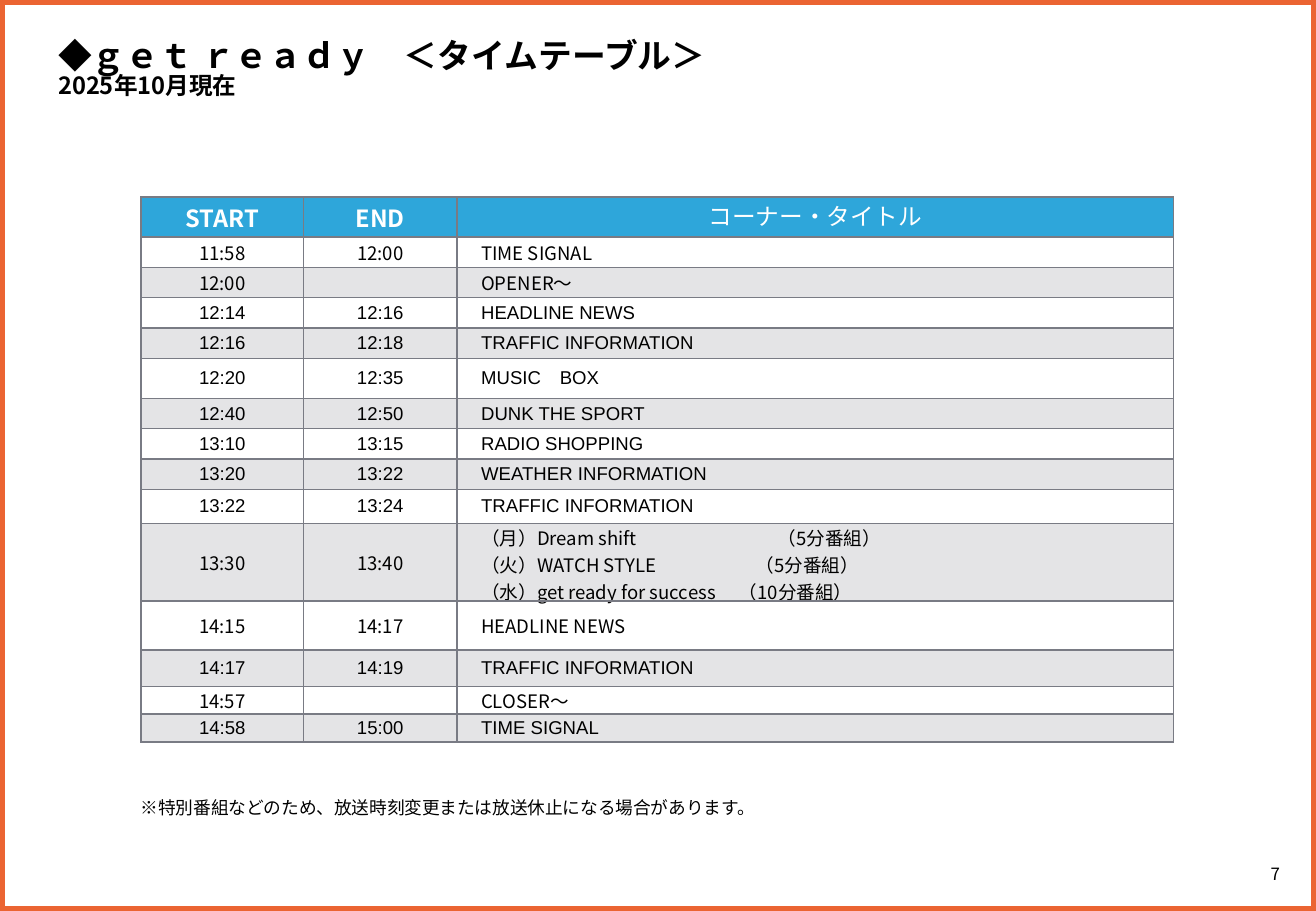
"""Build the radio programme timetable slide."""
from pptx import Presentation
from pptx.dml.color import RGBColor
from pptx.enum.shapes import MSO_SHAPE as Shape
from pptx.enum.text import MSO_ANCHOR as Anchor, MSO_AUTO_SIZE as AutoSize, PP_ALIGN as Align
from pptx.oxml import parse_xml
from pptx.oxml.ns import nsdecls, qn
from pptx.util import Inches, Pt
from lxml.etree import SubElement

BLACK = RGBColor(0x00, 0x00, 0x00)
WHITE = RGBColor(0xFF, 0xFF, 0xFF)
ORANGE = RGBColor(0xEB, 0x64, 0x32)
BLUE = RGBColor(0x2E, 0xA6, 0xDA)
GRAY = RGBColor(0x79, 0x7B, 0x84)
NOTO, ARIAL = "Noto Sans CJK JP", "Arial"
COLUMNS, ROWS = 1083, 750

deck = Presentation()
deck.slide_width, deck.slide_height = Inches(10.83), Inches(7.5)
column, row_unit = deck.slide_width // COLUMNS, deck.slide_height // ROWS
slide = deck.slides.add_slide(deck.slide_layouts[6])


def add_run(paragraph, text, size, face=NOTO, color=BLACK, bold=False):
    run = paragraph.add_run()
    run.text = text
    for key, value in dict(name=face, size=Pt(size), bold=bold).items():
        setattr(run.font, key, value)
    run.font.color.rgb = color
    SubElement(run.font._element, qn("a:ea")).set("typeface", face)


def add_text(left, top, width, height, anchor=Anchor.TOP, fit=AutoSize.SHAPE_TO_FIT_TEXT):
    box = slide.shapes.add_textbox(left * column, top * row_unit, width * column, height * row_unit)
    settings = dict(word_wrap=True, auto_size=fit, vertical_anchor=anchor)
    for key, value in settings.items():
        setattr(box.text_frame, key, value)
    return box.text_frame.paragraphs[0]


page_number = add_text(1016, 702, 67, 35, Anchor.MIDDLE, AutoSize.NONE)
page_number.alignment = Align.CENTER
add_run(page_number, "7", 10)

border = slide.shapes.add_shape(Shape.RECTANGLE, 0, 0, deck.slide_width, deck.slide_height)
border.shadow.inherit = False
border.fill.background()
border.line.color.rgb = ORANGE
border.line.width = Pt(6)

title = add_text(38, 29, 622, 44)
title.line_spacing = 0.85
add_run(title, "◆", 20)
add_run(title, "ｇｅｔ ｒｅａｄｙ　＜タイムテーブル＞", 20, bold=True)
title.add_line_break()
add_run(title, "2025年10月現在", 14, bold=True)

programmes = [
    ("START", "END", "コーナー・タイトル", 33, NOTO),
    ("11:58", "12:00", "TIME SIGNAL", 25, NOTO),
    ("12:00", "", "OPENER〜", 25, NOTO),
    ("12:14", "12:16", "HEADLINE NEWS", 25, ARIAL),
    ("12:16", "12:18", "TRAFFIC INFORMATION", 25, ARIAL),
    ("12:20", "12:35", "MUSIC　BOX", 33, ARIAL),
    ("12:40", "12:50", "DUNK THE SPORT", 25, ARIAL),
    ("13:10", "13:15", "RADIO SHOPPING", 25, ARIAL),
    ("13:20", "13:22", "WEATHER INFORMATION", 25, ARIAL),
    ("13:22", "13:24", "TRAFFIC INFORMATION", 28, ARIAL),
    ("13:30", "13:40", "（月）Dream shift\t（5分番組）\n（火）WATCH STYLE\t（5分番組）\n"
     "（水）get ready for success\t（10分番組）", 64, NOTO),
    ("14:15", "14:17", "HEADLINE NEWS", 40, NOTO),
    ("14:17", "14:19", "TRAFFIC INFORMATION", 30, ARIAL),
    ("14:57", "", "CLOSER〜", 23, NOTO),
    ("14:58", "15:00", "TIME SIGNAL", 23, ARIAL),
]
duration_tabs = [244, 226, 212]
timetable = slide.shapes.add_table(len(programmes), 3, 116 * column, 162 * row_unit,
                                   850 * column, 447 * row_unit).table
timetable.horz_banding = False
for table_column, width in zip(timetable.columns, (134, 126, 590)):
    table_column.width = width * column

for r, (start, end, corner, height, face) in enumerate(programmes):
    timetable.rows[r].height = height * row_unit
    for c, text in enumerate((start, end, corner)):
        cell = timetable.cell(r, c)
        is_header, is_corner = r == 0, c == 2
        indent = 20 * column if is_corner and not is_header else 0
        for key, value in dict(margin_left=indent, margin_right=0, margin_top=0,
                               margin_bottom=0, vertical_anchor=Anchor.MIDDLE).items():
            setattr(cell, key, value)
        properties = cell._tc.get_or_add_tcPr()
        for side in ("lnL", "lnR", "lnT", "lnB"):
            properties.append(parse_xml(
                f'<a:{side} {nsdecls("a")} w="12700"><a:solidFill>'
                f'<a:srgbClr val="{GRAY}"/></a:solidFill></a:{side}>'))
        if is_header or r % 2 == 0:
            cell.fill.solid()
            cell.fill.fore_color.rgb = BLUE if is_header else GRAY
            if not is_header:
                shade = properties.find(f"{qn('a:solidFill')}/{qn('a:srgbClr')}")
                SubElement(shade, qn("a:alpha")).set("val", "20000")
        else:
            cell.fill.background()
        lines = text.split("\n")
        for i, line in enumerate(lines):
            paragraph = cell.text_frame.add_paragraph() if i else cell.text_frame.paragraphs[0]
            paragraph.alignment = Align.LEFT if indent else Align.CENTER
            if "\t" in line:
                tabs = SubElement(paragraph._p.get_or_add_pPr(), qn("a:tabLst"))
                tab = SubElement(tabs, qn("a:tab"))
                tab.set("pos", str(duration_tabs[i] * column))
                tab.set("algn", "l")
            if not line:
                SubElement(paragraph._p, qn("a:endParaRPr")).set("sz", "1100")
            elif is_header:
                add_run(paragraph, line, 14, ARIAL if is_corner else face, WHITE, not is_corner)
            else:
                add_run(paragraph, line, 11, face)

notice = add_text(106, 651, 862, 28)
add_run(notice, "※特別番組などのため、放送時刻変更または放送休止になる場合があります。", 10.5)

deck.save("out.pptx")
